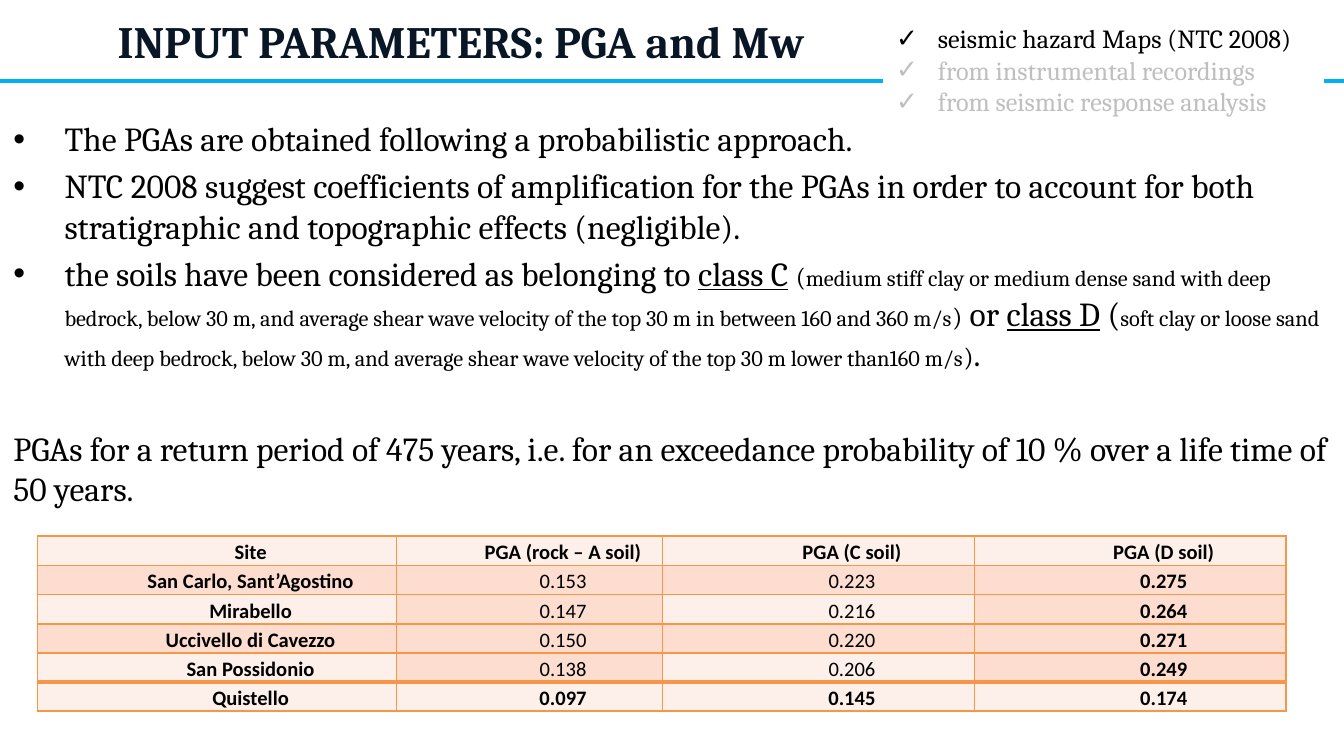
from dataclasses import dataclass

from lxml.etree import SubElement
from pptx import Presentation
from pptx.dml.color import RGBColor as RGB
from pptx.enum.shapes import MSO_CONNECTOR as Connector, MSO_SHAPE as Shape
from pptx.enum.text import MSO_ANCHOR as Anchor, MSO_AUTO_SIZE as AutoSize, PP_ALIGN as Align
from pptx.oxml.ns import qn
from pptx.util import Inches, Pt


@dataclass(frozen=True)
class Theme:
    ink: RGB = RGB(0, 0, 0)
    title: RGB = RGB(0x09, 0x16, 0x25)
    muted: RGB = RGB(0xBF, 0xBF, 0xBF)
    white: RGB = RGB(0xFF, 0xFF, 0xFF)
    rule: RGB = RGB(0x00, 0xB0, 0xF0)
    border: str = "F79646"
    light: RGB = RGB(0xFD, 0xEF, 0xE9)
    band: RGB = RGB(0xFC, 0xDD, 0xCF)
    serif: str = "Cambria"
    sans: str = "Calibri"
    title_size: Pt = Pt(24)
    body_size: Pt = Pt(18)
    source_size: Pt = Pt(14)
    detail_size: Pt = Pt(12)
    table_size: Pt = Pt(11)


T = Theme()


def add_run(p, text, color=T.ink, **font):
    r = p.add_run()
    r.text = text
    for name, value in {"name": T.serif, **font}.items():
        setattr(r.font, name, value)
    r.font.color.rgb = color


def set_bullet(p, char, indent):
    """Hang the paragraph on a bullet, or clear its bullet if char is None."""
    pPr = p._p.get_or_add_pPr()
    pPr.set("marL", str(Inches(indent)))
    pPr.set("indent", str(-Inches(indent)))
    if char:
        SubElement(pPr, qn("a:buFont"), typeface="Arial")
        SubElement(pPr, qn("a:buChar"), char=char)
    else:
        SubElement(pPr, qn("a:buNone"))


prs = Presentation()
prs.slide_width = Inches(10)
prs.slide_height = prs.slide_width * 9 // 16
s = prs.slides.add_slide(prs.slide_layouts[1])

# Title and body text
title, body = s.shapes.title, s.placeholders[1]
for sp, box, anchor in [
    (title, (0.2, 0.05, 6.46, 0.5), Anchor.MIDDLE),
    (body, (0, 0.83, 10, 3.71), Anchor.TOP),
]:
    sp.left, sp.top, sp.width, sp.height = map(Inches, box)
    for name, value in {"word_wrap": True, "auto_size": AutoSize.NONE,
                        "vertical_anchor": anchor}.items():
        setattr(sp.text_frame, name, value)

p = title.text_frame.paragraphs[0]
p.alignment = Align.CENTER
add_run(p, "INPUT PARAMETERS: PGA and Mw", T.title, size=T.title_size, bold=True)

main = {"size": T.body_size}
term = {"size": T.body_size, "underline": True}
bracket = {"size": T.source_size}
detail = {"size": T.detail_size}
body_paragraphs = [
    ("•", 0, [("The PGAs are obtained following a probabilistic approach.", main)]),
    ("•", 3.6, [("NTC 2008 suggest coefficients of amplification for the PGAs in order to "
                 "account for both stratigraphic and topographic effects (negligible).", main)]),
    ("•", 3.6, [
        ("the soils have been considered as belonging to ", main),
        ("class C", term),
        (" ", main),
        ("(", bracket),
        ("medium stiff clay or medium dense sand with deep bedrock, below 30 m, and average "
         "shear wave velocity of the top 30 m in between 160 and 360 m/s", detail),
        (")", bracket),
        (" or ", main),
        ("class D", term),
        (" (", main),
        ("soft clay or loose sand with deep bedrock, below 30 m, and average shear wave "
         "velocity of the top 30 m lower than160 m/s", detail),
        (")", bracket),
        (".", main),
    ]),
    (None, 29, [("PGAs for a return period of 475 years, i.e. for an exceedance probability "
                 "of 10 % over a life time of 50 years.", main)]),
]
tf = body.text_frame
for i, (char, before, runs) in enumerate(body_paragraphs):
    p = tf.add_paragraph() if i else tf.paragraphs[0]
    set_bullet(p, char, 0.38 if char else 0)
    p.space_before = Pt(before)
    for text, font in runs:
        add_run(p, text, **font)

# PGA table
rows = [
    ("Site", "PGA (rock – A soil)", "PGA (C soil)", "PGA (D soil)"),
    ("San Carlo, Sant’Agostino", "0.153", "0.223", "0.275"),
    ("Mirabello", "0.147", "0.216", "0.264"),
    ("Uccivello di Cavezzo", "0.150", "0.220", "0.271"),
    ("San Possidonio", "0.138", "0.206", "0.249"),
    ("Quistello", "0.097", "0.145", "0.174"),
]
last = len(rows) - 1
table = s.shapes.add_table(len(rows), 4, Inches(0.28), Inches(3.99),
                           Inches(9.29), Inches(1.26)).table
table.first_row = table.horz_banding = False
for column, width in zip(table.columns, (2.67, 1.98, 2.32, 2.32)):
    column.width = Inches(width)
for i, row in enumerate(rows):
    table.rows[i].height = Inches(0.21)
    for j, text in enumerate(row):
        cell = table.cell(i, j)
        for name, value in {"margin_left": Inches(0.07), "margin_right": Inches(0.07),
                            "margin_top": 0, "margin_bottom": 0}.items():
            setattr(cell, name, value)
        p = cell.text_frame.paragraphs[0]
        p.alignment, p.line_spacing = Align.CENTER, 1.15
        p._p.get_or_add_pPr().set("marL", str(Inches(0.5)))
        add_run(p, text, name=T.sans, size=T.table_size,
                bold=i in (0, last) or j in (0, 3))

        tcPr = cell._tc.get_or_add_tcPr()
        for side in ("lnL", "lnR", "lnT", "lnB"):
            thick = (i, side) in ((last, "lnT"), (last - 1, "lnB"))
            ln = SubElement(tcPr, qn(f"a:{side}"), w=str(Pt(2 if thick else 1)))
            fill = SubElement(ln, qn("a:solidFill"))
            SubElement(fill, qn("a:srgbClr"), val=T.border)
        banded = 0 < i < last and (i % 2 or j % 2)
        cell.fill.solid()
        cell.fill.fore_color.rgb = T.band if banded else T.light

# Header rule, interrupted by the list of sources
rule = s.shapes.add_connector(Connector.STRAIGHT, 0, Inches(0.6), Inches(10), Inches(0.6))
rule.line.color.rgb, rule.line.width = T.rule, Pt(2.25)
SubElement(rule._element.spPr, qn("a:effectLst"))

sources = s.shapes.add_shape(Shape.RECTANGLE, Inches(6.57), Inches(0.12),
                             Inches(3.28), Inches(0.81))
sources.shadow.inherit = False
sources.fill.solid()
sources.fill.fore_color.rgb = T.white
sources.line.fill.background()
tf = sources.text_frame
tf.word_wrap, tf.vertical_anchor = False, Anchor.TOP
for i, (text, color) in enumerate([
    ("seismic hazard Maps (NTC 2008)", T.ink),
    ("from instrumental recordings", T.muted),
    ("from seismic response analysis", T.muted),
]):
    p = tf.add_paragraph() if i else tf.paragraphs[0]
    p.alignment = Align.LEFT
    set_bullet(p, "✓", 0.31)
    add_run(p, text, color, size=T.source_size)

prs.save("out.pptx")
